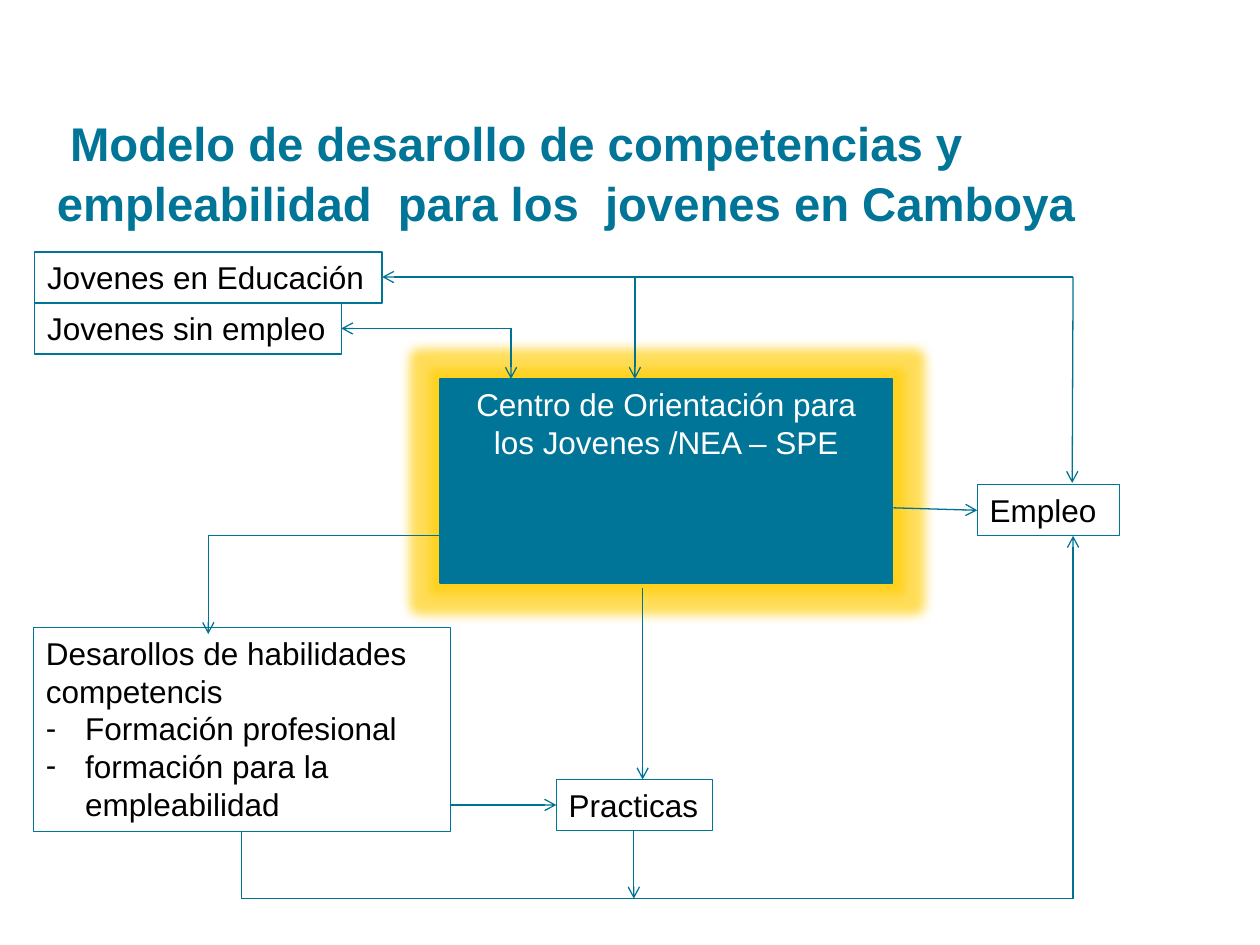
from dataclasses import dataclass

from lxml.etree import SubElement
from pptx import Presentation
from pptx.dml.color import RGBColor
from pptx.enum.shapes import MSO_CONNECTOR as Connector
from pptx.enum.text import MSO_ANCHOR as Anchor, MSO_AUTO_SIZE as AutoSize, PP_ALIGN as Align
from pptx.oxml.ns import qn
from pptx.util import Pt


@dataclass(frozen=True)
class Theme:
    font: str = "Arial"
    teal: RGBColor = RGBColor(0x00, 0x75, 0x97)
    arrow: RGBColor = RGBColor(0x00, 0x72, 0x94)
    black: RGBColor = RGBColor(0x00, 0x00, 0x00)
    white: RGBColor = RGBColor(0xFF, 0xFF, 0xFF)
    glow: str = "FFCC00"
    title_size: float = 27
    body_size: float = 18
    line_width: float = 0.75


THEME = Theme()


def style_font(font, size, color, bold=False):
    font.name, font.size, font.bold = THEME.font, Pt(size), bold
    font.color.rgb = color


def add_title(slide, text, left, top, width, height):
    title = slide.shapes.title
    title.left, title.top, title.width, title.height = map(Pt, (left, top, width, height))
    frame = title.text_frame
    frame.text = text
    frame.word_wrap = True
    frame.auto_size = AutoSize.NONE
    frame.vertical_anchor = Anchor.BOTTOM
    frame.margin_left = frame.margin_top = frame.margin_right = frame.margin_bottom = 0
    paragraph = frame.paragraphs[0]
    paragraph.alignment = Align.LEFT
    paragraph.line_spacing = 1.05
    paragraph._p.get_or_add_pPr().set("indent", str(Pt(7.5)))
    style_font(paragraph.runs[0].font, THEME.title_size, THEME.teal, bold=True)


def add_dash(paragraph):
    properties = paragraph._p.get_or_add_pPr()
    properties.set("marL", str(Pt(22.5)))
    properties.set("indent", str(Pt(-22.5)))
    SubElement(properties, qn("a:buFont"), typeface=THEME.font)
    SubElement(properties, qn("a:buChar"), char="-")


def add_box(slide, lines, left, top, width, height, items=(), wrap=True,
            color=THEME.black, align=Align.LEFT):
    box = slide.shapes.add_textbox(*map(Pt, (left, top, width, height)))
    box.line.color.rgb = THEME.teal
    box.line.width = Pt(THEME.line_width)
    frame = box.text_frame
    frame.word_wrap = wrap
    frame.auto_size = AutoSize.NONE
    frame.text = "\n".join([*lines, *items])
    for index, paragraph in enumerate(frame.paragraphs):
        paragraph.alignment = align
        if index >= len(lines):
            add_dash(paragraph)
        style_font(paragraph.runs[0].font, THEME.body_size, color)
    return box


def add_glow(shape, radius, opacity):
    effects = SubElement(shape._element.spPr, qn("a:effectLst"))
    glow = SubElement(effects, qn("a:glow"), rad=str(Pt(radius)))
    color = SubElement(glow, qn("a:srgbClr"), val=THEME.glow)
    SubElement(color, qn("a:alpha"), val=str(opacity * 1000))


def add_line(slide, start, end, arrow=True):
    line = slide.shapes.add_connector(Connector.STRAIGHT, *map(Pt, (*start, *end)))
    line.line.color.rgb = THEME.arrow
    line.line.width = Pt(THEME.line_width)
    if arrow:
        SubElement(line.line._get_or_add_ln(), qn("a:tailEnd"), type="arrow")
    SubElement(line._element.spPr, qn("a:effectLst"))


def add_route(slide, *points, both_ends=False, arrow=True):
    """Draw straight legs through the points, with arrowheads at the outer ends."""
    legs = list(zip(points, points[1:]))
    for index, (start, end) in enumerate(legs):
        if both_ends and index == 0:
            add_line(slide, end, start)
        else:
            add_line(slide, start, end, arrow and index == len(legs) - 1)


def main():
    presentation = Presentation()
    presentation.slide_width, presentation.slide_height = Pt(720), Pt(540)
    slide = presentation.slides.add_slide(presentation.slide_layouts[5])

    add_title(slide, "Modelo de desarollo de competencias y empleabilidad  para los  "
              "jovenes en Camboya", 32.5, 16, 602, 116)

    # Stages of the model
    row = 29.2
    add_box(slide, ["Jovenes en Educación"], 19.8, 144, 198.6, row)
    add_box(slide, ["Jovenes sin empleo"], 19.8, 173.2, 175.2, row, wrap=False)
    center = add_box(slide, ["Centro de Orientación para los Jovenes /NEA – SPE"],
                     251.4, 216.5, 258.6, 116.6, color=THEME.white, align=Align.CENTER)
    center.fill.solid()
    center.fill.fore_color.rgb = THEME.teal
    add_glow(center, 12, 65)
    add_box(slide, ["Desarollos de habilidades", "competencis"], 19.1, 358.6, 238.3, 116.4,
            items=["Formación profesional", "formación para la empleabilidad"])
    add_box(slide, ["Practicas"], 317.9, 445.4, 89.3, row, wrap=False)
    add_box(slide, ["Empleo"], 558.4, 277, 81.4, row, wrap=False)

    # Young people to the center and to employment
    top, bottom, branch, employment = 158.3, 513.5, 362.8, 613.2
    add_route(slide, (218.4, top), (branch, top), (branch, 216.5), both_ends=True)
    add_route(slide, (195, 187.7), (292, 187.7), (292, 216.5), both_ends=True)
    add_route(slide, (branch, top), (employment, top), (612.7, 276))

    # Center to employment, internships and training
    add_route(slide, (510.5, 290.2), (558.4, 291.6))
    add_route(slide, (367.2, 336), (367.2, 445.4))
    add_route(slide, (251.4, 306), (119, 306), (119, 362.3))

    # Training and internships to employment
    add_route(slide, (257.4, 460), (317.9, 460))
    add_route(slide, (138.2, 475), (138.2, bottom), (employment, bottom), (employment, 306.2))
    add_route(slide, (362.2, 474.6), (362.2, bottom))

    presentation.save("out.pptx")


if __name__ == "__main__":
    main()
